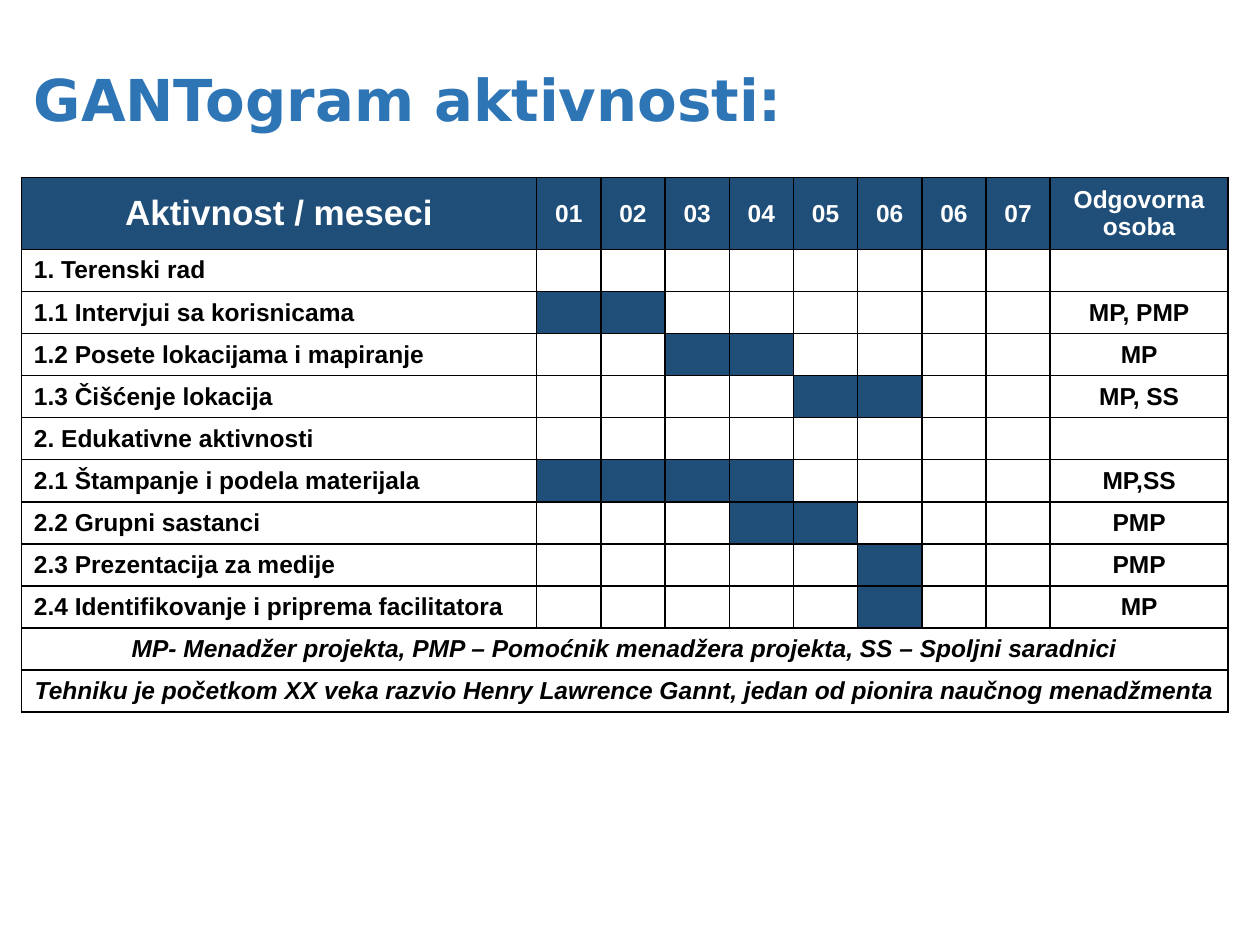
from lxml import etree
from pptx import Presentation
from pptx.dml.color import RGBColor
from pptx.enum.text import MSO_ANCHOR, PP_ALIGN
from pptx.oxml.ns import qn
from pptx.util import Pt

MIDDLE = MSO_ANCHOR.MIDDLE
LEFT = PP_ALIGN.LEFT
CENTER = PP_ALIGN.CENTER

COLORS = {
    "title": "2E75B6",
    "bar": "1F4E79",
    "border": "010000",
    "light": "FFFFFF",
    "dark": "000000",
}
MONTHS = ["01", "02", "03", "04", "05", "06", "06", "07"]
ACTIVITIES = [
    ("1. Terenski rad", (), ""),
    ("1.1 Intervjui sa korisnicama", (1, 2), "MP, PMP"),
    ("1.2 Posete lokacijama i mapiranje", (3, 4), "MP"),
    ("1.3 Čišćenje lokacija", (5, 6), "MP, SS"),
    ("2. Edukativne aktivnosti", (), ""),
    ("2.1 Štampanje i podela materijala", (1, 2, 3, 4), "MP,SS"),
    ("2.2 Grupni sastanci", (4, 5), "PMP"),
    ("2.3 Prezentacija za medije", (6,), "PMP"),
    ("2.4 Identifikovanje i priprema facilitatora", (6,), "MP"),
]
NOTES = [
    "MP- Menadžer projekta, PMP – Pomoćnik menadžera projekta, SS – Spoljni saradnici",
    "Tehniku je početkom XX veka razvio Henry Lawrence Gannt, jedan od pionira naučnog menadžmenta",
]
COLUMN_WIDTHS = [294.5] + [36.7] * len(MONTHS) + [101.7]
ROW_HEIGHTS = [41] + [23.96] * (len(ACTIVITIES) + len(NOTES))


class SlideBuilder:
    def __init__(self, slide):
        self.slide = slide
        self.title_font = "DejaVu Sans"
        self.table_font = "Arial"

    def style_text(self, para, text, font, size, color, align=LEFT, italic=False):
        para.text = text
        para.alignment = align
        for span in para.runs:
            span.font.name = font
            span.font.size = Pt(size)
            span.font.bold = True
            span.font.italic = italic
            span.font.color.rgb = RGBColor.from_string(COLORS[color])

    def title(self, text, left, top, width, height):
        box = self.slide.shapes.add_textbox(Pt(left), Pt(top), Pt(width), Pt(height))
        frame = box.text_frame
        frame.word_wrap = True
        frame.vertical_anchor = MIDDLE
        para = frame.paragraphs[0]
        para.line_spacing = 0.9
        self.style_text(para, text, self.title_font, 33, "title")

    def table(self, left, top, widths, heights):
        frame = self.slide.shapes.add_table(
            len(heights), len(widths), Pt(left), Pt(top), Pt(sum(widths)), Pt(sum(heights))
        )
        table = frame.table
        table.first_row = False
        table.horz_banding = False
        for column, width in zip(table.columns, widths):
            column.width = Pt(width)
        for row, height in zip(table.rows, heights):
            row.height = Pt(height)
        for cell in table.iter_cells():
            cell.margin_top = cell.margin_bottom = 0
            cell.fill.background()
            self.border(cell)
        return table

    def border(self, cell):
        properties = cell._tc.get_or_add_tcPr()
        for index, side in enumerate(("lnL", "lnR", "lnT", "lnB")):
            line = etree.Element(qn(f"a:{side}"), w=str(Pt(1)))
            fill = etree.SubElement(line, qn("a:solidFill"))
            etree.SubElement(fill, qn("a:srgbClr"), val=COLORS["border"])
            properties.insert(index, line)

    def cell_text(self, cell, text, size=14, color="dark", align=CENTER, italic=False):
        cell.vertical_anchor = MIDDLE
        cell.margin_left = cell.margin_right = Pt(7.2)
        cell.margin_top = cell.margin_bottom = Pt(3.6)
        para = cell.text_frame.paragraphs[0]
        self.style_text(para, text, self.table_font, size, color, align, italic)

    def cell_fill(self, cell):
        cell.fill.solid()
        cell.fill.fore_color.rgb = RGBColor.from_string(COLORS["bar"])


def main():
    deck = Presentation()
    deck.slide_width, deck.slide_height = Pt(720), Pt(540)
    page = SlideBuilder(deck.slides.add_slide(deck.slide_layouts[6]))
    page.title("GANTogram aktivnosti:", 12.2, 18, 696, 81.4)

    chart = page.table(12.2, 101.5, COLUMN_WIDTHS, ROW_HEIGHTS)
    last_column = len(COLUMN_WIDTHS) - 1
    headings = ["Aktivnost / meseci", *MONTHS, "Odgovorna osoba"]
    for column, heading in enumerate(headings):
        cell = chart.cell(0, column)
        page.cell_fill(cell)
        page.cell_text(cell, heading, 14 if column else 20, "light")

    for row, (activity, active_columns, person) in enumerate(ACTIVITIES, 1):
        page.cell_text(chart.cell(row, 0), activity, align=LEFT)
        for column in active_columns:
            page.cell_fill(chart.cell(row, column))
        if person:
            page.cell_text(chart.cell(row, last_column), person)

    for row, note in enumerate(NOTES, len(ACTIVITIES) + 1):
        cell = chart.cell(row, 0)
        cell.merge(chart.cell(row, last_column))
        page.cell_text(cell, note, italic=True)

    deck.save("out.pptx")


if __name__ == "__main__":
    main()
